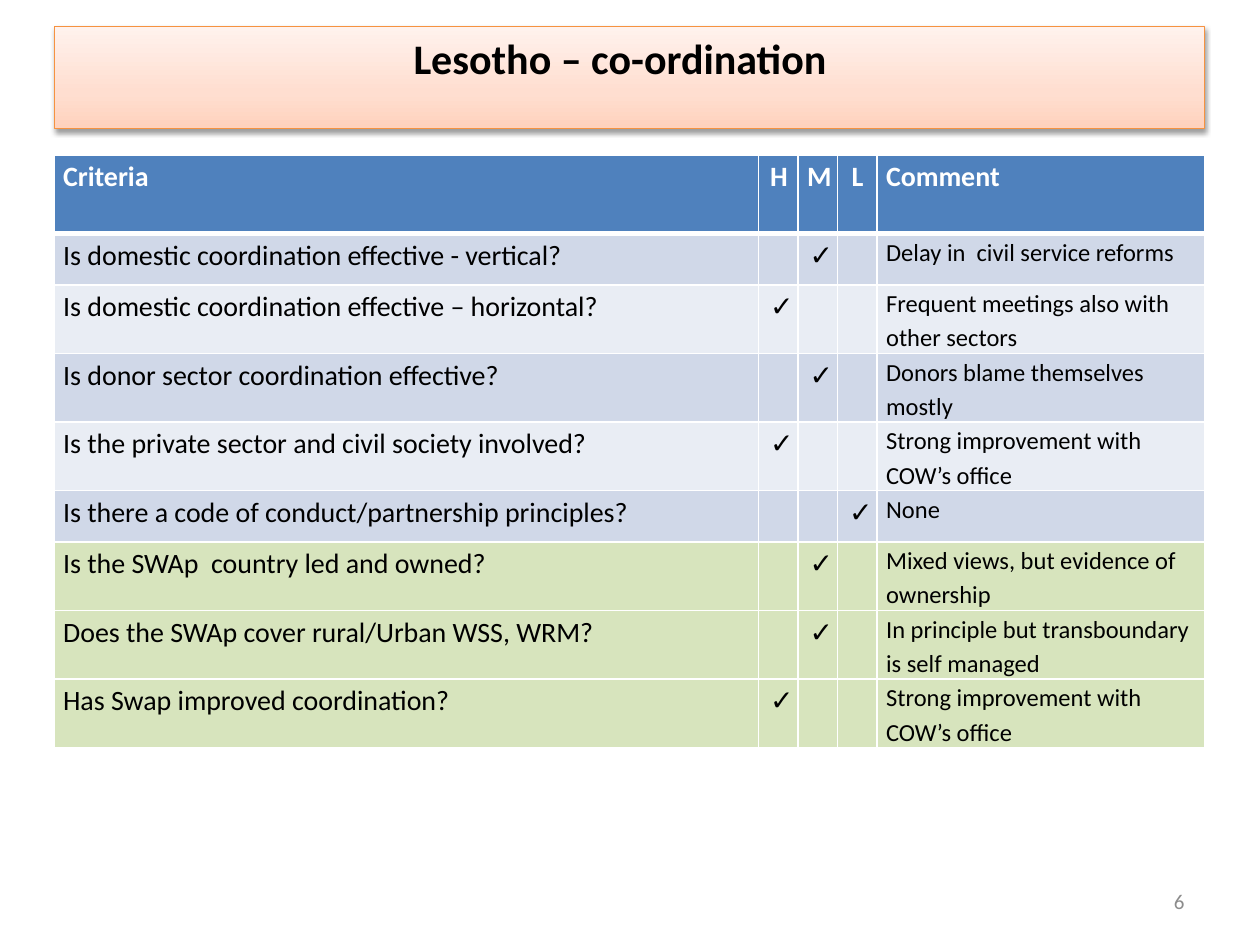
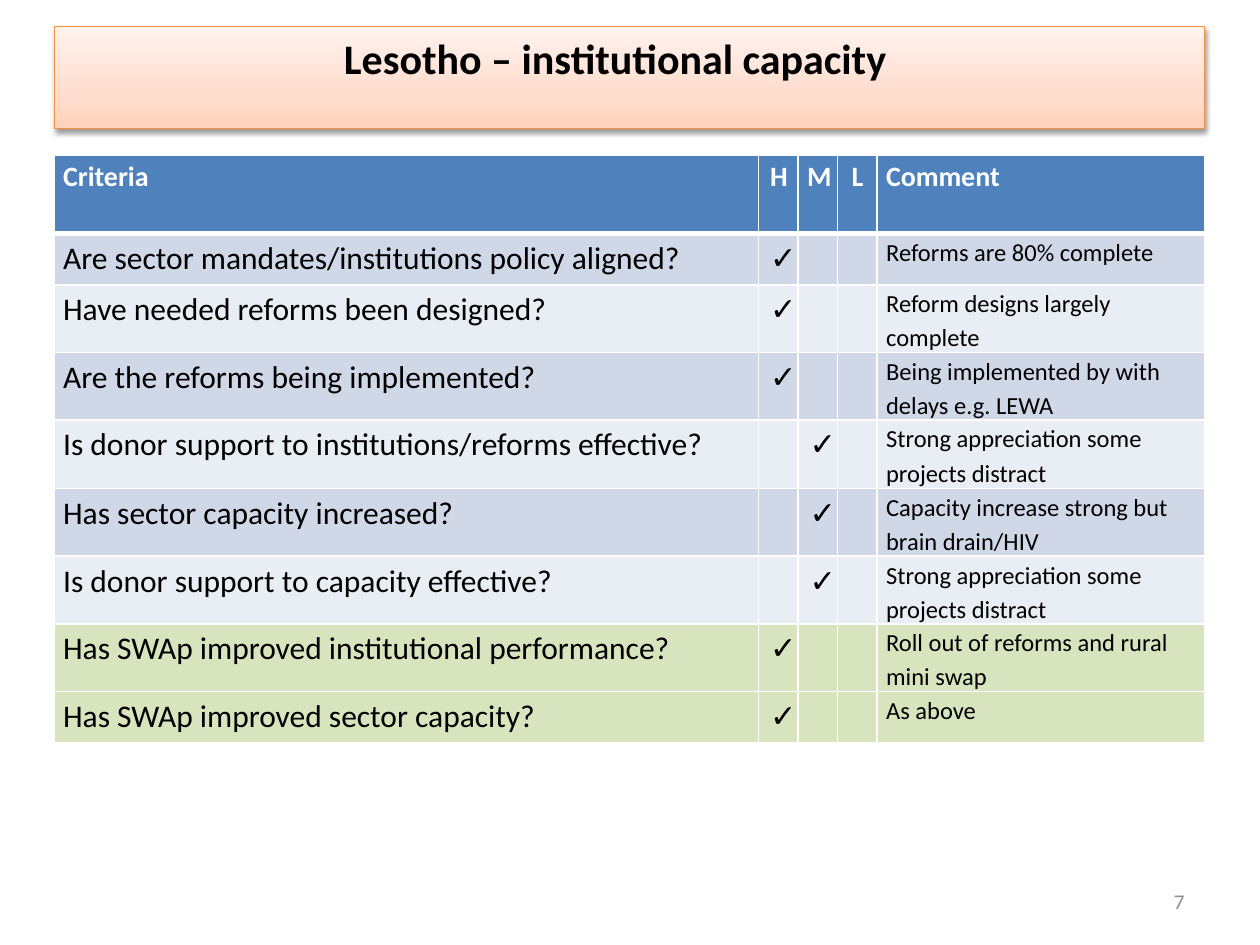
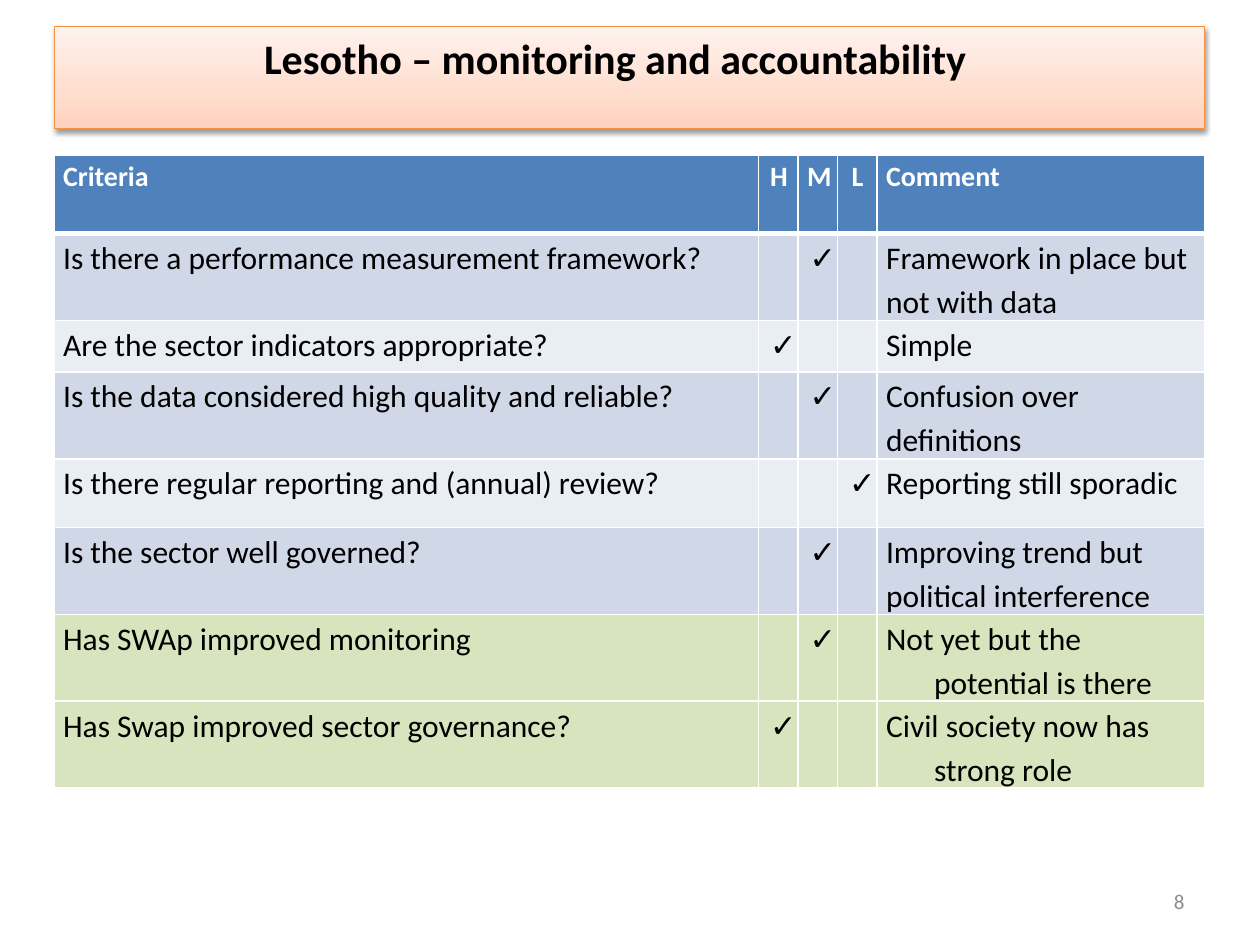
from copy import deepcopy

from lxml import etree
from pptx import Presentation
from pptx.dml.color import RGBColor
from pptx.enum.shapes import MSO_SHAPE
from pptx.enum.text import MSO_ANCHOR, PP_ALIGN
from pptx.oxml.ns import qn
from pptx.util import Pt

RECTANGLE = MSO_SHAPE.RECTANGLE
LEFT, CENTER, RIGHT = PP_ALIGN.LEFT, PP_ALIGN.CENTER, PP_ALIGN.RIGHT
TOP, MIDDLE = MSO_ANCHOR.TOP, MSO_ANCHOR.MIDDLE

BLACK = RGBColor(0x00, 0x00, 0x00)
WHITE = RGBColor(0xFF, 0xFF, 0xFF)
GREY = RGBColor(0x8C, 0x8C, 0x8C)
HEADER_BLUE = RGBColor(0x4F, 0x81, 0xBD)
ROW_BANDS = (RGBColor(0xD0, 0xD8, 0xE8), RGBColor(0xE9, 0xED, 0xF4))
SWAP_GREEN = RGBColor(0xD7, 0xE4, 0xBD)
BANNER_LINE = RGBColor(0xF6, 0x92, 0x40)
BANNER_STOPS = (
    (0, RGBColor(0xFF, 0xD2, 0xBD)),
    (0.35, RGBColor(0xFF, 0xDE, 0xD0)),
    (1, RGBColor(0xFF, 0xF2, 0xED)),
)

FONT = "Calibri"
MARGIN_LEFT, CONTENT_WIDTH = Pt(31), Pt(657.5)
COLUMN_WIDTHS = (402.5, 22.6, 22.6, 22.6, 187.2)
HEADINGS = ("Criteria", "H", "M", "L", "Comment")
RATINGS = "HML"
HEADER_HEIGHT, ROW_HEIGHT, TALL_ROW_HEIGHT = Pt(44.9), Pt(29.3), Pt(39.2)
TALL_ROW = 4
CELL_INSET = Pt(5.1)
HANGING = Pt(27.4)
MARK_INDENT = Pt(1.44)


class AssessmentDeck:
    def __init__(self):
        self.presentation = Presentation()
        self.presentation.slide_width = Pt(720)
        self.presentation.slide_height = Pt(540)
        self.slide = None

    def new_slide(self):
        self.slide = self.presentation.slides.add_slide(self.presentation.slide_layouts[6])

    def styled_text(self, frame, text, size, color=BLACK, bold=False, align=LEFT):
        paragraph = frame.paragraphs[0]
        paragraph.text = text
        paragraph.alignment = align
        font = paragraph.runs[0].font
        font.name, font.size, font.bold = FONT, Pt(size), bold
        font.color.rgb = color
        return paragraph

    def banner(self, title, right_inset):
        """Draw the title band; right_inset moves the centred title to the left."""
        band = self.slide.shapes.add_shape(RECTANGLE, MARGIN_LEFT, Pt(15), CONTENT_WIDTH, Pt(58.4))
        band.fill.gradient()
        band.fill.gradient_angle = 90
        properties = band._element.spPr
        stops = properties.find(qn("a:gradFill")).find(qn("a:gsLst"))
        stops.append(deepcopy(stops[0]))
        for stop, (position, color) in zip(band.fill.gradient_stops, BANNER_STOPS):
            stop.position = position
            stop.color.rgb = color
        band.line.color.rgb = BANNER_LINE
        band.line.width = Pt(0.75)

        band.shadow.inherit = False
        shadow = etree.SubElement(
            properties.find(qn("a:effectLst")), qn("a:outerShdw"),
            blurRad=str(Pt(3.1)), dist=str(Pt(1.6)), dir="5400000", rotWithShape="0")
        shade = etree.SubElement(shadow, qn("a:srgbClr"), val=str(BLACK))
        etree.SubElement(shade, qn("a:alpha"), val="38000")

        frame = band.text_frame
        frame.word_wrap = True
        frame.vertical_anchor = TOP
        frame.margin_right = Pt(right_inset)
        self.styled_text(frame, title, 24, bold=True, align=CENTER)

    def page_number(self, number):
        box = self.slide.shapes.add_textbox(Pt(516), Pt(500.5), Pt(168), Pt(28.75))
        box.text_frame.word_wrap = True
        box.text_frame.vertical_anchor = MIDDLE
        self.styled_text(box.text_frame, str(number), 12, GREY, align=RIGHT)

    def cell(self, cell, fill, top=1, bottom=1):
        """Style an empty cell: insets, white borders (top and bottom in points) and fill."""
        cell.margin_left = cell.margin_right = CELL_INSET
        cell.margin_top = cell.margin_bottom = 0
        properties = cell._tc.get_or_add_tcPr()
        for side, width in (("L", 1), ("R", 1), ("T", top), ("B", bottom)):
            border = etree.SubElement(properties, qn("a:ln" + side), w=str(Pt(width)))
            solid = etree.SubElement(border, qn("a:solidFill"))
            etree.SubElement(solid, qn("a:srgbClr"), val=str(WHITE))
        cell.fill.solid()
        cell.fill.fore_color.rgb = fill

    def cell_text(self, cell, text, size, indent=0, hanging=False, **style):
        paragraph = self.styled_text(cell.text_frame, text, size, **style)
        paragraph.line_spacing = 1.15
        properties = paragraph._p.get_or_add_pPr()
        properties.set("marL", str(HANGING if hanging else indent))
        properties.set("indent", str(-HANGING if hanging else 0))

    def criteria_table(self, criteria, height, size, comment_size, hang_swap_comments):
        graphic = self.slide.shapes.add_table(
            len(criteria) + 1, len(HEADINGS), MARGIN_LEFT, Pt(88.6), CONTENT_WIDTH, Pt(height))
        table = graphic.table
        table.horz_banding = False
        for column, width in zip(table.columns, COLUMN_WIDTHS):
            column.width = Pt(width)
        for index, row in enumerate(table.rows):
            row.height = TALL_ROW_HEIGHT if index == TALL_ROW else ROW_HEIGHT
        table.rows[0].height = HEADER_HEIGHT
        graphic.height = Pt(height)

        for column, heading in enumerate(HEADINGS):
            cell = table.cell(0, column)
            self.cell(cell, HEADER_BLUE, bottom=3)
            self.cell_text(
                cell, heading, 16, indent=MARK_INDENT if heading == "H" else 0,
                hanging=column == 0, color=WHITE, bold=True,
                align=CENTER if heading in ("M", "L") else LEFT)

        for row, (question, rating, comment) in enumerate(criteria, start=1):
            about_swap = "swap" in question.lower()
            fill = SWAP_GREEN if about_swap else ROW_BANDS[(row - 1) % 2]
            for column in range(len(HEADINGS)):
                self.cell(table.cell(row, column), fill, top=3 if row == 1 else 1)
            self.cell_text(table.cell(row, 0), question, size, hanging=True)
            mark = table.cell(row, 1 + RATINGS.index(rating))
            self.cell_text(mark, "✓", size, indent=MARK_INDENT)
            self.cell_text(table.cell(row, 4), comment, comment_size,
                           hanging=about_swap and hang_swap_comments)

    def assessment(self, number, title, title_inset, criteria, height, size,
                   comment_size=14, hang_swap_comments=False):
        self.new_slide()
        self.criteria_table(criteria, height, size, comment_size, hang_swap_comments)
        self.banner(title, title_inset)
        self.page_number(number)


COORDINATION = (
    ("Is domestic coordination effective - vertical?", "M", "Delay in  civil service reforms"),
    ("Is domestic coordination effective – horizontal?", "H",
     "Frequent meetings also with other sectors"),
    ("Is donor sector coordination effective?", "M", "Donors blame themselves mostly"),
    ("Is the private sector and civil society involved?", "H",
     "Strong improvement with COW’s office"),
    ("Is there a code of conduct/partnership principles?", "L", "None"),
    ("Is the SWAp  country led and owned?", "M", "Mixed views, but evidence of ownership"),
    ("Does the SWAp cover rural/Urban WSS, WRM?", "M",
     "In principle but transboundary is self managed"),
    ("Has Swap improved coordination?", "H", "Strong improvement with COW’s office"),
)

CAPACITY = (
    ("Are sector mandates/institutions policy aligned?", "H", "Reforms are 80% complete"),
    ("Have needed reforms been designed?", "H", "Reform designs largely complete"),
    ("Are the reforms being implemented?", "H", "Being implemented by with delays e.g. LEWA"),
    ("Is donor support to institutions/reforms effective?", "M",
     "Strong appreciation some projects distract"),
    ("Has sector capacity increased?", "M", "Capacity increase strong but brain drain/HIV"),
    ("Is donor support to capacity effective?", "M",
     "Strong appreciation some projects distract"),
    ("Has SWAp improved institutional performance?", "H",
     "Roll out of reforms and rural mini swap"),
    ("Has SWAp improved sector capacity?", "H", "As above"),
)

MONITORING = (
    ("Is there a performance measurement framework?", "M",
     "Framework in place but not with data"),
    ("Are the sector indicators appropriate?", "H", "Simple"),
    ("Is the data considered high quality and reliable?", "M", "Confusion over definitions"),
    ("Is there regular reporting and (annual) review?", "L", "Reporting still sporadic"),
    ("Is the sector well governed?", "M", "Improving trend but political interference"),
    ("Has SWAp improved monitoring", "M", "Not yet but the potential is there"),
    ("Has Swap improved sector governance?", "H", "Civil society now has strong role"),
)


def main():
    deck = AssessmentDeck()
    deck.assessment(6, "Lesotho – co-ordination", 18, COORDINATION, 334.8, 16)
    deck.assessment(7, "Lesotho – institutional capacity", 23.5, CAPACITY, 334.8, 18)
    deck.assessment(8, "Lesotho – monitoring and accountability", 23.5, MONITORING, 360.7, 18,
                    comment_size=18, hang_swap_comments=True)
    deck.presentation.save("out.pptx")


if __name__ == "__main__":
    main()
